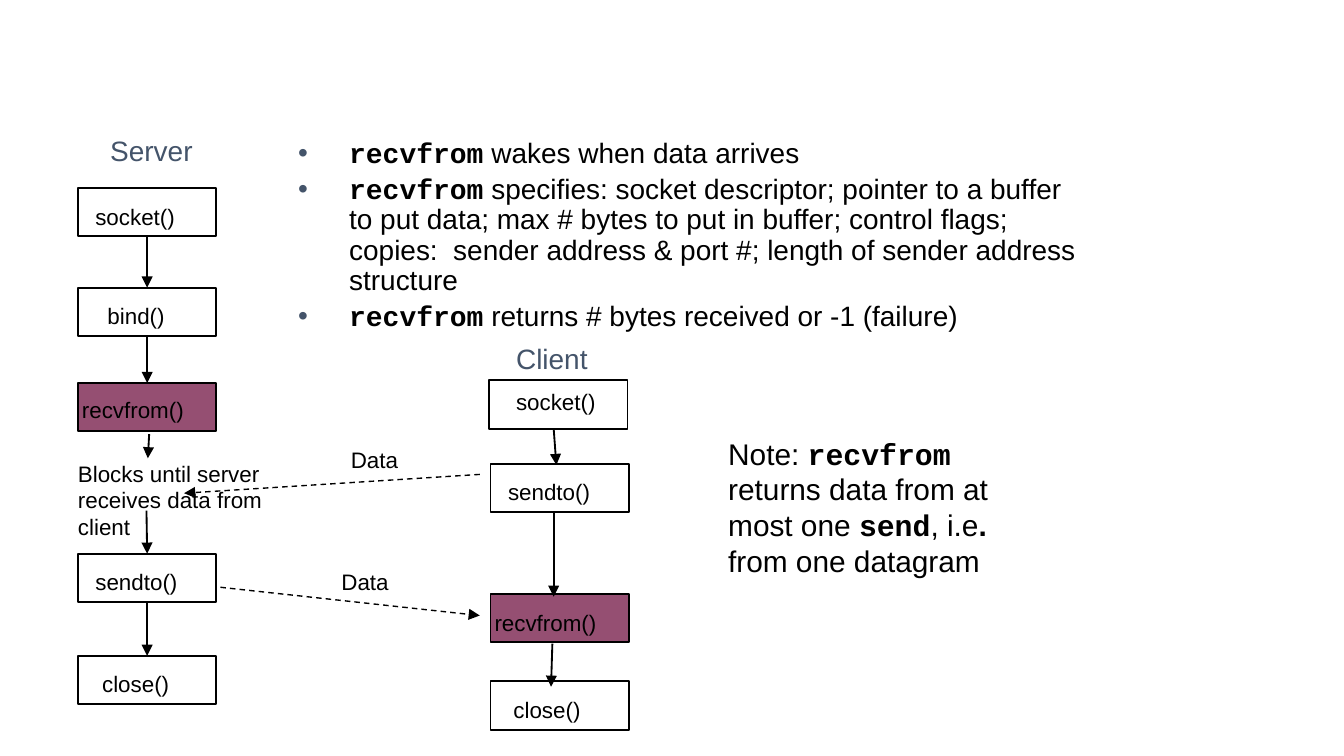
"""Build the slide on the recvfrom calls of a UDP server and client."""
from dataclasses import dataclass

from lxml import etree
from pptx import Presentation
from pptx.dml.color import RGBColor
from pptx.enum.dml import MSO_LINE
from pptx.enum.shapes import MSO_CONNECTOR, MSO_SHAPE
from pptx.enum.text import MSO_AUTO_SIZE
from pptx.oxml.ns import qn
from pptx.util import Inches, Pt

RECT = MSO_SHAPE.RECTANGLE
LINE = MSO_CONNECTOR.STRAIGHT
DASH = MSO_LINE.DASH
GROW = MSO_AUTO_SIZE.SHAPE_TO_FIT_TEXT
TOP, BOTTOM = 0, 2
COLS, ROWS = 100, 56.25


@dataclass(frozen=True)
class Theme:
    """Colours, fonts and type sizes."""
    ink: str = "000000"
    slate: str = "44546A"
    plum: str = "954F72"
    sans: str = "Arial"
    mono: str = "Courier New"
    small: float = 12
    head: float = 15
    note: float = 16


class Board:
    """Draws styled parts on one slide, with lengths in grid units."""

    def __init__(self, deck, theme):
        self.theme = theme
        self.slide = deck.slides.add_slide(deck.slide_layouts[6])
        self.col = deck.slide_width / COLS
        self.row = deck.slide_height / ROWS

    def place(self, x, y):
        """Turn columns and rows into slide units."""
        return round(x * self.col), round(y * self.row)

    def box(self, x, y, wide, high, fill=None):
        """Draw an outlined rectangle."""
        shape = self.slide.shapes.add_shape(
            RECT, *self.place(x, y), *self.place(wide, high))
        shape.shadow.inherit = False
        if fill:
            shape.fill.solid()
            shape.fill.fore_color.rgb = RGBColor.from_string(fill)
        else:
            shape.fill.background()
        shape.line.color.rgb = RGBColor.from_string(self.theme.ink)
        shape.line.width = Pt(1)
        return shape

    def frame(self, x, y, wide, high, wrap=True, inset=True):
        """Add an empty text box and return its frame."""
        frame = self.slide.shapes.add_textbox(
            *self.place(x, y), *self.place(wide, high)).text_frame
        frame.word_wrap = wrap
        if not inset:
            frame.margin_left = frame.margin_right = 0
            frame.margin_top = frame.margin_bottom = 0
            frame.auto_size = GROW
        return frame

    def style(self, para, size, color):
        """Set the font that all runs of a paragraph share."""
        para.font.size = Pt(size)
        para.font.name = self.theme.sans
        para.font.color.rgb = RGBColor.from_string(color)

    def label(self, text, x, y, wide, high=2.3, wrap=False, size=None,
              color=None):
        """Add plain text without insets."""
        para = self.frame(x, y, wide, high, wrap, False).paragraphs[0]
        para.text = text
        self.style(para, size or self.theme.small, color or self.theme.ink)

    def rich(self, para, parts, size):
        """Fill a paragraph with (text, font, bold) runs."""
        self.style(para, size, self.theme.ink)
        for text, font, bold in parts:
            run = para.add_run()
            run.text = text
            run.font.name = font
            run.font.bold = bold

    def bullet(self, para):
        """Give a paragraph a hanging round bullet."""
        para.line_spacing = 0.9
        para.space_before = Pt(3)
        props = para._p.get_or_add_pPr()
        props.set("marL", str(Inches(0.38)))
        props.set("indent", str(-Inches(0.38)))
        tint = etree.Element(qn("a:buClr"))
        etree.SubElement(tint, qn("a:srgbClr"), val=self.theme.slate)
        face = etree.Element(qn("a:buFont"), typeface=self.theme.sans)
        mark = etree.Element(qn("a:buChar"), char="•")
        font = props.find(qn("a:defRPr"))
        for item in (tint, face, mark):
            font.addprevious(item)

    def arrow(self, start, end, src=None, dst=None, dash=False):
        """Draw an arrow, joined to the boxes given."""
        link = self.slide.shapes.add_connector(
            LINE, *self.place(*start), *self.place(*end))
        if src:
            link.begin_connect(src, BOTTOM)
        if dst:
            link.end_connect(dst, TOP)
        link.line.color.rgb = RGBColor.from_string(self.theme.ink)
        link.line.width = Pt(0.75 if dash else 1)
        if dash:
            link.line.dash_style = DASH
        etree.SubElement(link.line._get_or_add_ln(), qn("a:tailEnd"),
                         type="triangle")
        etree.SubElement(link._element.spPr, qn("a:effectLst"))


WIDTHS = {"socket()": 6.6, "bind()": 4.7, "recvfrom()": 8.4,
          "sendto()": 6.8, "close()": 5.5}
SERVER = [("socket()", 5.8, 14, 7.1, 15.1), ("bind()", 5.8, 21.4, 8, 22.5),
          ("recvfrom()", 5.8, 28.5, 6.1, 29.5),
          ("sendto()", 5.8, 41.2, 7.1, 42.3),
          ("close()", 5.8, 48.8, 7.6, 49.9)]
CLIENT = [("socket()", 36.4, 28.3, 38.4, 28.9),
          ("sendto()", 36.5, 34.5, 37.8, 35.6),
          ("recvfrom()", 36.5, 44.2, 36.8, 45.3),
          ("close()", 36.5, 50.7, 38.2, 51.8)]
CLIENT_ARROWS = [((41.2, 31.9), (41.4, 34.6)), ((41.2, 38.2), (41.2, 44.4)),
                 ((41.1, 47.9), (41, 51.1))]
DATA = [((35.7, 35.3), (13.7, 36.7), (26.1, 33.2)),
        ((16.4, 43.7), (35.7, 45.8), (25.4, 42.3))]
FACTS = [" wakes when data arrives",
         " specifies: socket descriptor; pointer to a buffer to put data; "
         "max # bytes to put in buffer; control flags; copies:  sender "
         "address & port #; length of sender address structure",
         " returns # bytes received or -1 (failure)"]


def stack(board, steps):
    """Draw the calls of one side and return their boxes."""
    boxes = []
    for name, x, y, left, top in steps:
        fill = board.theme.plum if name == "recvfrom()" else None
        boxes.append(board.box(x, y, 10.3, 3.6, fill))
        board.label(name, left, top, WIDTHS[name])
    return boxes


def main():
    """Build and save the slide."""
    deck = Presentation()
    deck.slide_width, deck.slide_height = Pt(720), Pt(405)
    theme = Theme()
    board = Board(deck, theme)

    for text, x, y, wide in (("Server", 8.2, 9.9, 6.8),
                             ("Client", 38.4, 25.4, 6)):
        board.label(text, x, y, wide, 2.8, size=theme.head,
                    color=theme.slate)
    first, bind, wait, send, close = stack(board, SERVER)
    stack(board, CLIENT)
    board.label("Blocks until server receives data from client",
                5.8, 34.2, 16.2, 6.8, wrap=True)

    board.arrow((11, 17.6), (11, 21.4), first, bind)
    board.arrow((11, 25), (11, 28.5), bind, wait)
    board.arrow((11.1, 32.3), (11, 34.1))
    board.arrow((10.9, 38), (10.9, 41.2), dst=send)
    board.arrow((11, 44.8), (11, 48.8), send, close)
    for start, end in CLIENT_ARROWS:
        board.arrow(start, end)
    for start, end, spot in DATA:
        board.arrow(start, end, dash=True)
        board.label("Data", *spot, 3.9)

    frame = board.frame(21.2, 9.9, 60, 20.6)
    for spot, fact in enumerate(FACTS):
        para = frame.add_paragraph() if spot else frame.paragraphs[0]
        board.rich(para, [("recvfrom", theme.mono, True),
                          (fact, theme.sans, False)], theme.head)
        board.bullet(para)

    note = board.frame(53.2, 31.9, 25.5, 13.3)
    board.rich(note.paragraphs[0], [
        ("Note: ", theme.sans, False), ("recvfrom", theme.mono, True),
        (" returns data from at most one ", theme.sans, False),
        ("send", theme.mono, True), (", i.e", theme.sans, False),
        (". ", theme.sans, True),
        ("from one datagram", theme.sans, False)], theme.note)
    deck.save("out.pptx")


if __name__ == "__main__":
    main()
